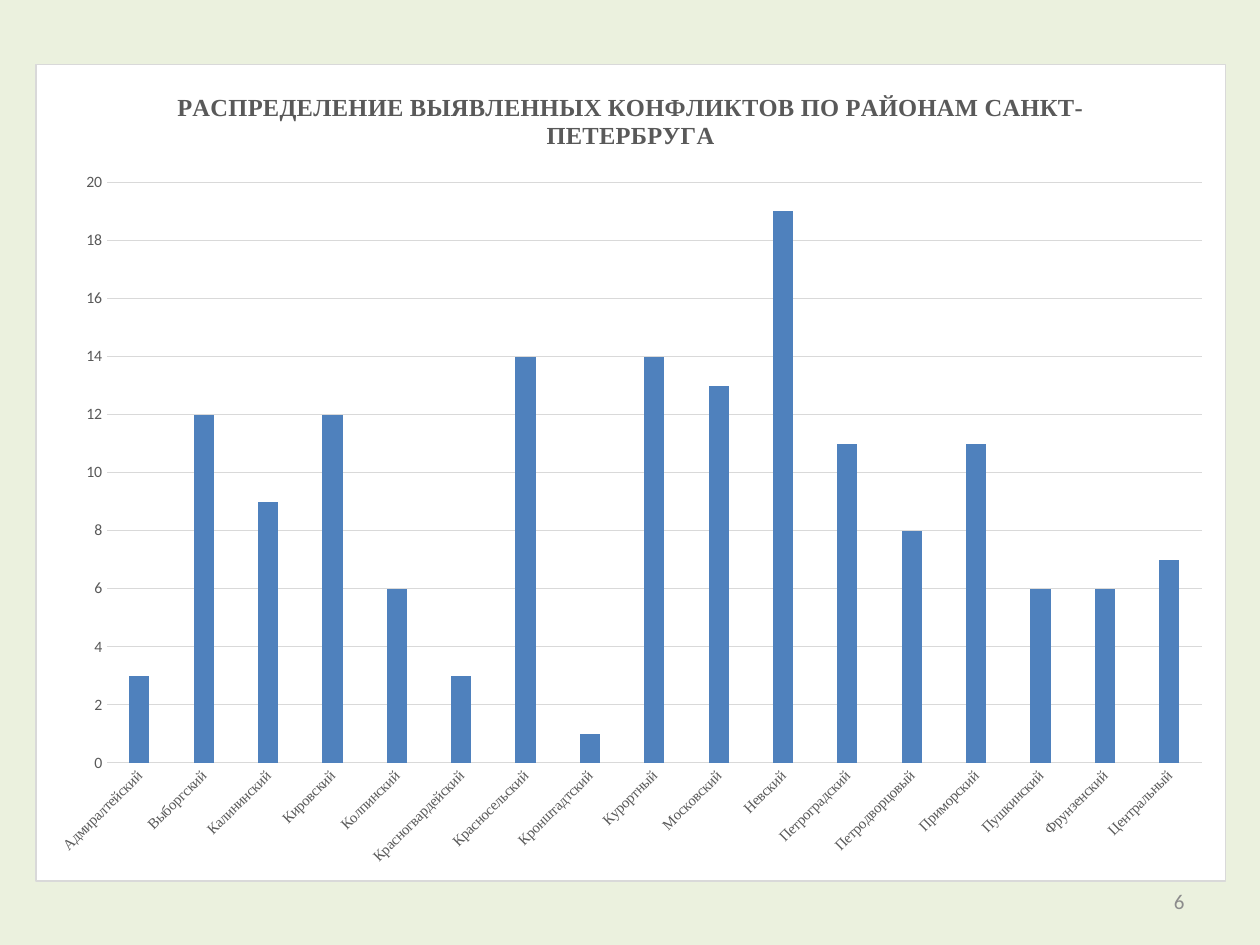
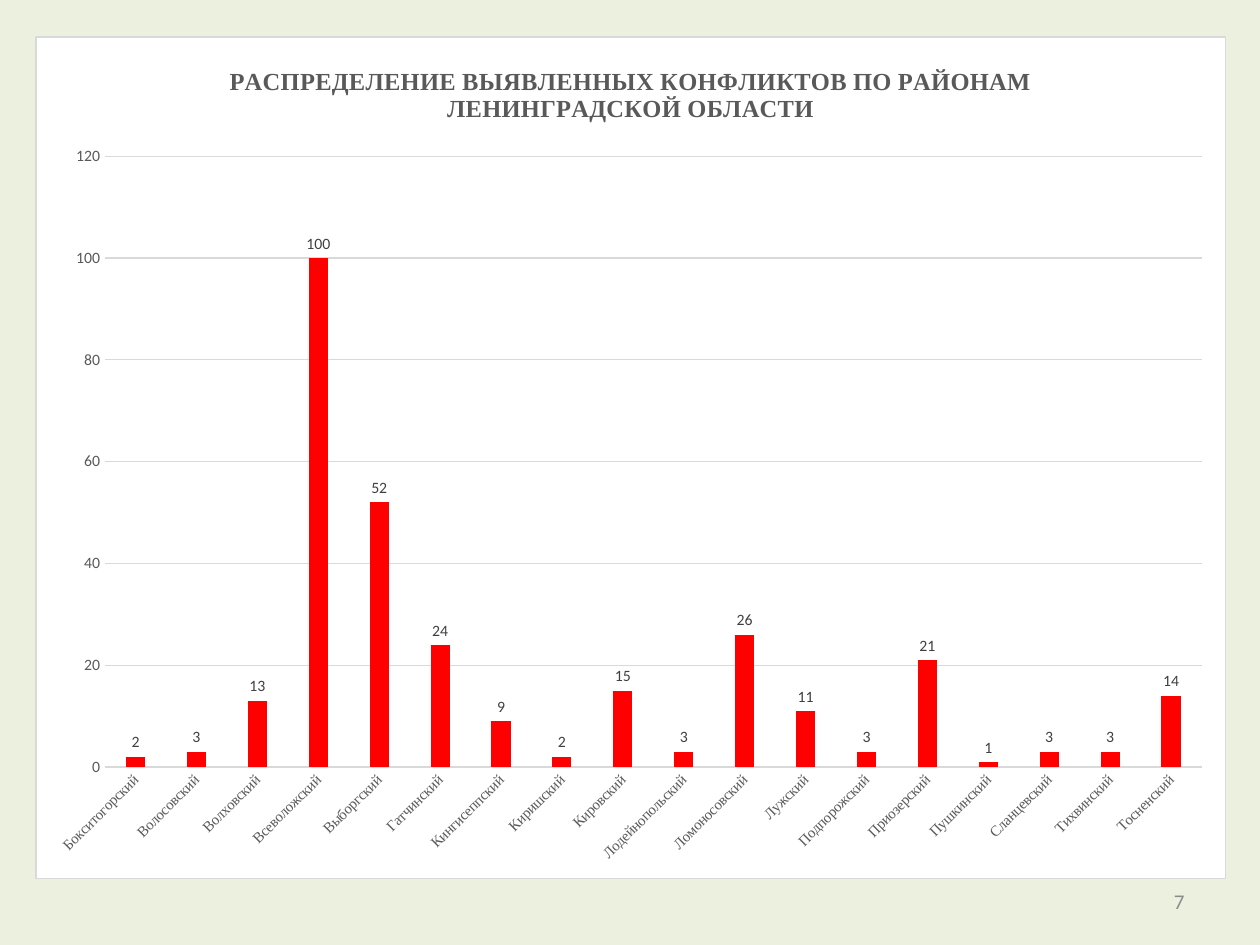
from lxml.etree import fromstring
from pptx import Presentation
from pptx.chart.data import CategoryChartData
from pptx.dml.color import RGBColor
from pptx.enum.chart import XL_CHART_TYPE, XL_LABEL_POSITION, XL_TICK_MARK
from pptx.enum.text import MSO_ANCHOR, PP_ALIGN
from pptx.oxml.ns import qn
from pptx.util import Pt

# Shared look
PALE_GREEN = RGBColor(0xEB, 0xF1, 0xDE)
PANEL_WHITE = RGBColor(0xFF, 0xFF, 0xFF)
RULE_GREY = RGBColor(0xD9, 0xD9, 0xD9)
TEXT_GREY = RGBColor(0x59, 0x59, 0x59)
LABEL_GREY = RGBColor(0x40, 0x40, 0x40)
NUMBER_GREY = RGBColor(0x8C, 0x8C, 0x8C)
CITY_BLUE = RGBColor(0x4F, 0x81, 0xBD)
REGION_RED = RGBColor(0xFF, 0x00, 0x00)

SERIF, SANS = "Times New Roman", "Calibri"
TITLE = {"name": SERIF, "size": Pt(14), "bold": True, "color": TEXT_GREY}
DISTRICT = {"name": SERIF, "size": Pt(8.5), "color": TEXT_GREY}
SCALE = {"name": SANS, "size": Pt(9), "color": TEXT_GREY}
BAR_VALUE = {"name": SANS, "size": Pt(9), "color": LABEL_GREY}
PAGE_NUMBER = {"name": SANS, "size": Pt(12), "color": NUMBER_GREY}

PANEL_LEFT, PANEL_WIDTH = Pt(20.16), Pt(680.4)
LABEL_ROTATION = -45
RULE_WIDTH = Pt(0.75)

# Content
CITY_CONFLICTS = {
    "Адмиралтейский": 3, "Выборгский": 12, "Калининский": 9,
    "Кировский": 12, "Колпинский": 6, "Красногвардейский": 3,
    "Красносельский": 14, "Кронштадтский": 1, "Курортный": 14,
    "Московский": 13, "Невский": 19, "Петроградский": 11,
    "Петродворцовый": 8, "Приморский": 11, "Пушкинский": 6,
    "Фрунзенский": 6, "Центральный": 7,
}
REGION_CONFLICTS = {
    "Бокситогорский": 2, "Волосовский": 3, "Волховский": 13,
    "Всеволожский": 100, "Выборгский": 52, "Гатчинский": 24,
    "Кингисеппский": 9, "Киришский": 2, "Кировский": 15,
    "Лодейнопольский": 3, "Ломоносовский": 26, "Лужский": 11,
    "Подпорожский": 3, "Приозерский": 21, "Пушкинский": 1,
    "Сланцевский": 3, "Тихвинский": 3, "Тосненский": 14,
}
TITLE_START = "РАСПРЕДЕЛЕНИЕ ВЫЯВЛЕННЫХ КОНФЛИКТОВ ПО РАЙОНАМ "


def format_font(font, style):
    for attribute, value in style.items():
        if attribute == "color":
            font.color.rgb = value
        else:
            setattr(font, attribute, value)


def draw_rule(line):
    line.color.rgb = RULE_GREY
    line.width = RULE_WIDTH


def add_page(deck, number):
    page = deck.slides.add_slide(deck.slide_layouts[6])
    page.background.fill.solid()
    page.background.fill.fore_color.rgb = PALE_GREEN
    corner = page.shapes.add_textbox(Pt(516), Pt(500.5), Pt(168), Pt(28.8))
    frame = corner.text_frame
    frame.word_wrap = True
    frame.vertical_anchor = MSO_ANCHOR.MIDDLE
    paragraph = frame.paragraphs[0]
    paragraph.alignment = PP_ALIGN.RIGHT
    digit = paragraph.add_run()
    digit.text = str(number)
    format_font(digit.font, PAGE_NUMBER)
    return page


def paint_panel(chart):
    """Give the whole chart area a white fill and a thin grey border."""
    panel = fromstring(
        '<c:spPr xmlns:c="http://schemas.openxmlformats.org/drawingml/2006/chart" '
        'xmlns:a="http://schemas.openxmlformats.org/drawingml/2006/main">'
        f'<a:solidFill><a:srgbClr val="{PANEL_WHITE}"/></a:solidFill>'
        f'<a:ln w="{int(RULE_WIDTH)}"><a:solidFill><a:srgbClr val="{RULE_GREY}"/>'
        '</a:solidFill></a:ln></c:spPr>')
    chart.element.find(qn("c:chart")).addnext(panel)


def format_axes(chart, top_value, step):
    districts, scale = chart.category_axis, chart.value_axis
    for axis, style in ((districts, DISTRICT), (scale, SCALE)):
        axis.major_tick_mark = axis.minor_tick_mark = XL_TICK_MARK.NONE
        format_font(axis.tick_labels.font, style)
    draw_rule(districts.format.line)
    district_axis = next(chart.element.iter(qn("c:catAx")))
    body = district_axis.find(qn("c:txPr")).find(qn("a:bodyPr"))
    body.set("rot", str(LABEL_ROTATION * 60000))
    body.set("vert", "horz")
    scale.format.line.fill.background()
    scale.has_major_gridlines = True
    draw_rule(scale.major_gridlines.format.line)
    for attribute, value in {"minimum_scale": 0, "maximum_scale": top_value,
                             "major_unit": step}.items():
        setattr(scale, attribute, value)


def show_values(bars):
    bars.has_data_labels = True
    labels = bars.data_labels
    labels.show_value = True
    labels.position = XL_LABEL_POSITION.OUTSIDE_END
    format_font(labels.font, BAR_VALUE)


def add_conflict_chart(page, top, height, place, conflicts, color, top_value, step):
    data = CategoryChartData()
    data.categories = list(conflicts)
    data.add_series("Series 1", list(conflicts.values()))
    chart = page.shapes.add_chart(XL_CHART_TYPE.COLUMN_CLUSTERED, PANEL_LEFT, top,
                                  PANEL_WIDTH, height, data).chart
    format_font(chart.font, {"name": SANS, "size": Pt(10)})
    chart.has_legend = False
    chart.has_title = True
    heading = chart.chart_title.text_frame.paragraphs[0].add_run()
    heading.text = TITLE_START + place
    format_font(heading.font, TITLE)
    paint_panel(chart)
    format_axes(chart, top_value, step)

    # Bars
    bars = chart.plots[0]
    for attribute, value in {"gap_width": 219, "overlap": -27,
                             "vary_by_categories": False}.items():
        setattr(bars, attribute, value)
    bar_fill = bars.series[0].format.fill
    bar_fill.solid()
    bar_fill.fore_color.rgb = color
    return bars


def main():
    deck = Presentation()
    deck.slide_width, deck.slide_height = Pt(720), Pt(540)

    # City districts
    city = add_page(deck, 6)
    add_conflict_chart(city, Pt(36.3), Pt(467.5), "САНКТ-ПЕТЕРБРУГА",
                       CITY_CONFLICTS, CITY_BLUE, 20, 2)

    # Region districts
    region = add_page(deck, 7)
    region_bars = add_conflict_chart(region, Pt(20.8), Pt(481.5), "ЛЕНИНГРАДСКОЙ ОБЛАСТИ",
                                     REGION_CONFLICTS, REGION_RED, 120, 20)
    show_values(region_bars)

    deck.save("out.pptx")


if __name__ == "__main__":
    main()
